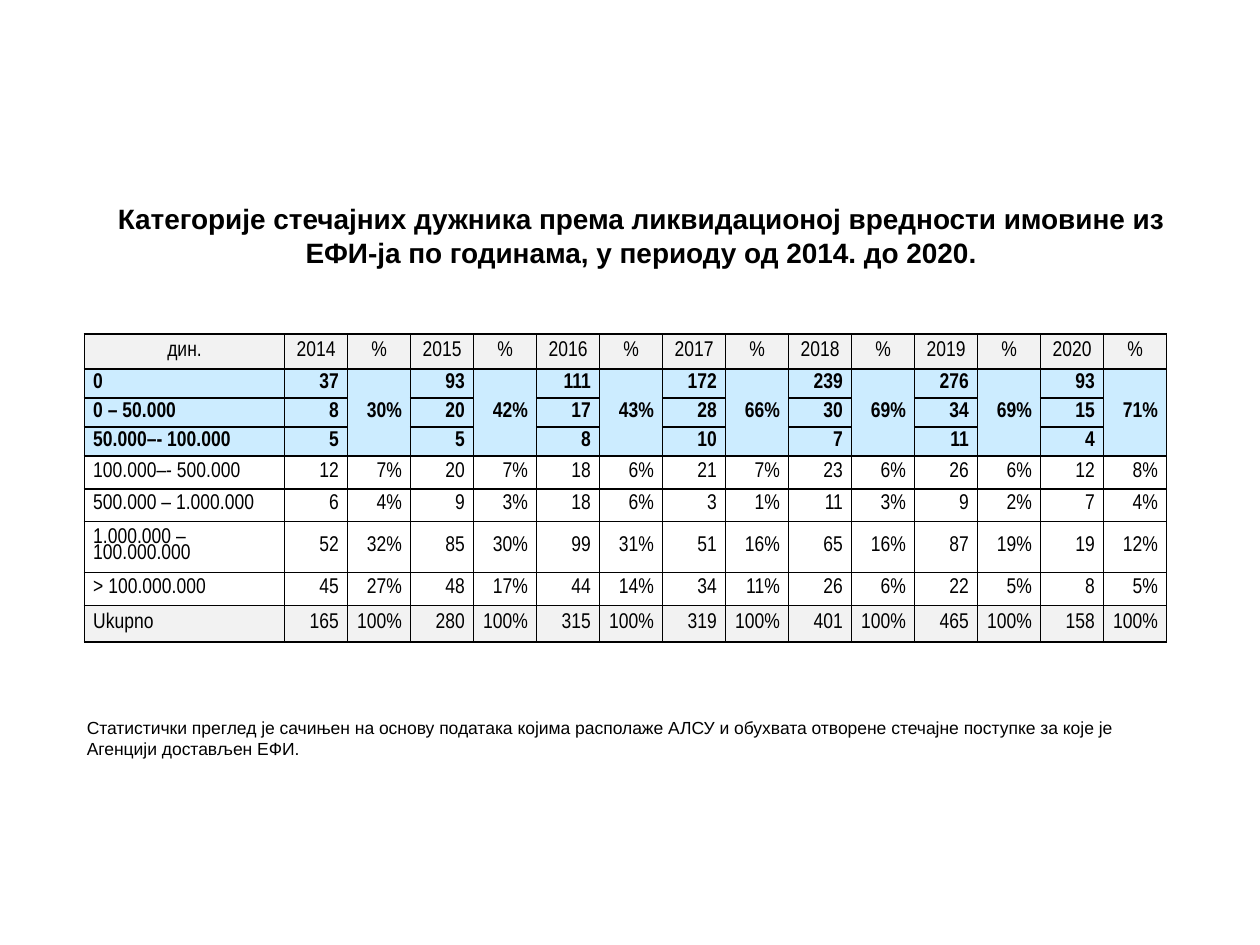
from lxml import etree
from pptx import Presentation
from pptx import util as u
from pptx.dml.color import RGBColor
from pptx.enum import text
from pptx.oxml.ns import qn

HUES = {"ink": "000000", "grey": "F2F2F2", "blue": "CCECFF"}
LEFT, MID, RIGHT = text.PP_ALIGN.LEFT, text.PP_ALIGN.CENTER, text.PP_ALIGN.RIGHT
TITLE = ("Категорије стечајних дужника према ликвидационој вредности имовине из "
         "ЕФИ-ја по годинама, у периоду од 2014. до 2020.")
NOTE = ("Статистички преглед је сачињен на основу података којима располаже АЛСУ "
        "и обухвата отворене стечајне поступке за које је Агенцији достављен ЕФИ.")
YEARS = range(2014, 2021)
BANDS = [
    ("0", [37, 93, 111, 172, 239, 276, 93], [30, 42, 43, 66, 69, 69, 71]),
    ("0 – 50.000", [8, 20, 17, 28, 30, 34, 15], None),
    ("50.000–- 100.000", [5, 5, 8, 10, 7, 11, 4], None),
    ("100.000–- 500.000", [12, 20, 18, 21, 23, 26, 12], [7, 7, 6, 7, 6, 6, 8]),
    ("500.000 – 1.000.000", [6, 9, 18, 3, 11, 9, 7], [4, 3, 6, 1, 3, 2, 4]),
    ("1.000.000 – 100.000.000", [52, 85, 99, 51, 65, 87, 19], [32, 30, 31, 16, 16, 19, 12]),
    ("> 100.000.000", [45, 48, 44, 34, 26, 22, 8], [27, 17, 14, 11, 6, 5, 5]),
    ("Ukupno", [165, 280, 315, 319, 401, 465, 158], [100] * 7),
]
HIGHS = [0.28] + [0.23] * 3 + [0.26] * 4 + [0.29]
LOW = range(1, 4)
WRAP = 6


class Deck:
    """Holds the style and the current slide, and adds elements to it."""

    def __init__(self):
        self.prs = Presentation()
        self.prs.slide_width, self.prs.slide_height = u.Inches(10), u.Inches(7.5)
        self.slide = self.prs.slides.add_slide(self.prs.slide_layouts[6])

    def put(self, para, words, size, face="Arial", bold=False, align=LEFT):
        para.alignment = align
        run = para.add_run()
        run.text = words
        font = run.font
        font.size, font.name, font.bold = u.Pt(size), face, bold
        font.color.rgb = RGBColor.from_string(HUES["ink"])

    def label(self, box, words, size, **style):
        frame = self.slide.shapes.add_textbox(*map(u.Inches, box)).text_frame
        frame.word_wrap = True
        self.put(frame.paragraphs[0], words, size, **style)

    def border(self, cell):
        props = cell._tc.get_or_add_tcPr()
        for spot, side in enumerate(("a:lnL", "a:lnR", "a:lnT", "a:lnB")):
            line = etree.Element(qn(side), w=str(u.Pt(1)))
            fill = etree.SubElement(line, qn("a:solidFill"))
            etree.SubElement(fill, qn("a:srgbClr"), val=HUES["ink"])
            props.insert(spot, line)

    def cell(self, cell, words, hue, pad=0, **style):
        cell.margin_left = cell.margin_right = u.Inches(0.07)
        cell.margin_top = cell.margin_bottom = u.Inches(pad)
        cell.vertical_anchor = text.MSO_ANCHOR.MIDDLE
        if hue:
            cell.fill.solid()
            cell.fill.fore_color.rgb = RGBColor.from_string(HUES[hue])
        else:
            cell.fill.background()
        self.border(cell)
        para = cell.text_frame.paragraphs[0]
        para.line_spacing = 0.8
        if words:
            self.put(para, words, 12.2, "Arial Narrow", **style)

    def table(self, spot, wides, highs, rows):
        size = (sum(wides), sum(highs))
        grid = self.slide.shapes.add_table(
            len(rows), len(wides), *map(u.Inches, spot + size)).table
        grid.horz_banding = grid.first_row = False
        for col, wide in zip(grid.columns, wides):
            col.width = u.Inches(wide)
        for row, high in zip(grid.rows, highs):
            row.height = u.Inches(high)
        for r, row in enumerate(rows):
            hue = "grey" if r in (0, len(rows) - 1) else "blue" if r in LOW else None
            for c, words in enumerate(row):
                align = MID if r == 0 else RIGHT if c else LEFT
                pad = 0.04 if (r, c) == (WRAP, 0) else 0
                self.cell(grid.cell(r, c), words, hue, pad, bold=r in LOW, align=align)
        for c in range(2, len(wides), 2):
            grid.cell(LOW[0], c).merge(grid.cell(LOW[-1], c))


def fill_rows():
    rows = [["дин."] + [word for year in YEARS for word in (str(year), "%")]]
    for name, counts, parts in BANDS:
        shares = [f"{part}%" for part in parts] if parts else [""] * len(counts)
        rows.append([name] + [word for pair in zip(map(str, counts), shares) for word in pair])
    return rows


def main():
    deck = Deck()
    deck.label((0.59, 1.55, 9, 0.79), TITLE, 16, bold=True, align=MID)
    deck.table((0.67, 2.65), [1.59] + [0.5] * 14, HIGHS, fill_rows())
    deck.label((0.59, 5.64, 8.82, 0.44), NOTE, 10)
    deck.prs.save("out.pptx")


if __name__ == "__main__":
    main()
